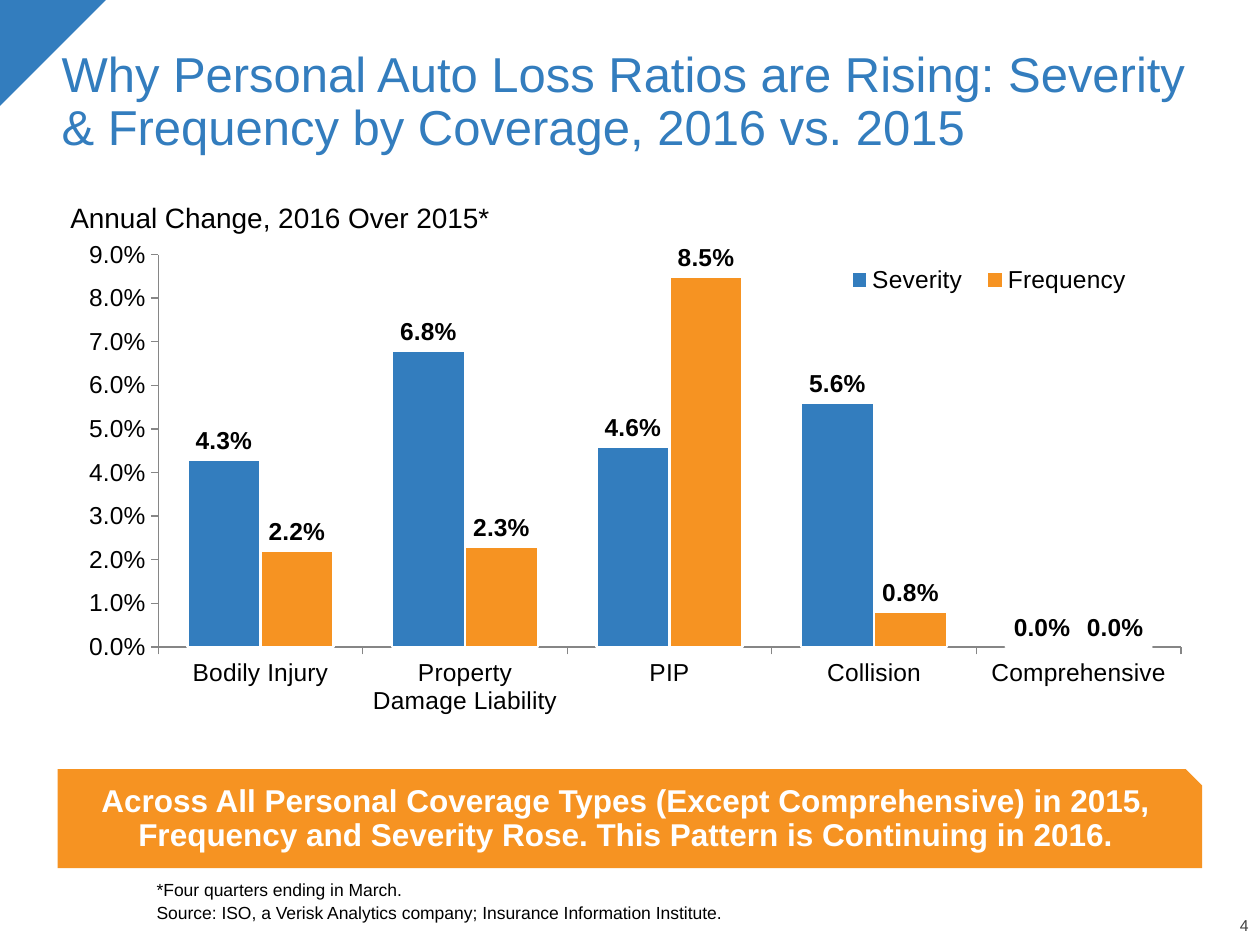
import pptx
import pptx.chart.data
import pptx.dml.color
import pptx.enum.chart
import pptx.enum.shapes
import pptx.enum.text
import pptx.oxml
import pptx.oxml.ns
import pptx.util
from dataclasses import dataclass

Pt = pptx.util.Pt
ALIGN = pptx.enum.text.PP_ALIGN
ANCHOR = pptx.enum.text.MSO_ANCHOR
CHART = pptx.enum.chart

# Content
TITLE = ("Why Personal Auto Loss Ratios are Rising: "
         "Severity & Frequency by Coverage, 2016 vs. 2015")
SUBTITLE = "Annual Change, 2016 Over 2015*"
COVERAGES = ["Bodily Injury", "Property Damage Liability", "PIP",
             "Collision", "Comprehensive"]
CHANGES = {"Severity": [0.043, 0.068, 0.046, 0.056, 0],
           "Frequency": [0.022, 0.023, 0.085, 0.008, 0]}
MESSAGE = ("Across All Personal Coverage Types (Except Comprehensive) in 2015, "
           "Frequency and Severity Rose. This Pattern is Continuing in 2016.")
NOTES = ["*Four quarters ending in March.",
         "Source: ISO, a Verisk Analytics company; Insurance Information Institute."]
PAGE_NUMBER = "4"

# Places: left, top, width, height in points
CORNER = (0, 0, 60.5, 60.5)
TITLE_AREA = (28, 18, 666, 75)
SUBTITLE_AREA = (33, 113, 666, 31)
CHART_AREA = (33, 109.5, 653, 327)
MESSAGE_AREA = (33, 439.5, 654, 56.5)
NOTES_AREA = (89.5, 495.5, 605, 32)
NUMBER_AREA = (679, 525, 34.5, 9.5)

# Shares of the chart area: x, y, width, height
PLOT_SHARE = (0.088, 0.11, 0.895, 0.686)
LEGEND_SHARE = (0.68, 0.12, 0.27, 0.07)


@dataclass
class Theme:
    font: str = "Arial"
    blue: str = "337DBE"
    orange: str = "F69322"
    white: str = "FFFFFF"
    black: str = "000000"
    dark: str = "404040"
    axis: str = "868686"
    title: int = 28
    message: int = 18
    subtitle: int = 16
    chart: int = 14
    notes: int = 10
    number: int = 9


theme = Theme()


def rgb(value):
    return pptx.dml.color.RGBColor.from_string(value)


def place(shape, area):
    shape.left, shape.top, shape.width, shape.height = map(Pt, area)


def style_font(font, size, color, bold=False):
    font.name, font.size, font.bold = theme.font, Pt(size), bold
    font.color.rgb = rgb(color)


def write(shape, lines, size, color, bold=False, align=ALIGN.LEFT,
          anchor=ANCHOR.TOP, insets=(7.2, 3.6, 7.2, 3.6), gap=0):
    frame = shape.text_frame
    frame.word_wrap = True
    frame.auto_size = pptx.enum.text.MSO_AUTO_SIZE.NONE
    frame.vertical_anchor = anchor
    (frame.margin_left, frame.margin_top,
     frame.margin_right, frame.margin_bottom) = map(Pt, insets)
    for index, line in enumerate(lines):
        para = frame.add_paragraph() if index else frame.paragraphs[0]
        para.alignment, para.line_spacing = align, 0.9
        para.space_before = Pt(gap if index else 0)
        span = para.add_run()
        span.text = line
        style_font(span.font, size, color, bold)
        if shape.is_placeholder:
            remove_bullet(para)


def remove_bullet(para):
    properties = para._p.get_or_add_pPr()
    properties.set("marL", "0")
    properties.set("indent", "0")
    properties.append(pptx.oxml.parse_xml(
        f'<a:buNone {pptx.oxml.ns.nsdecls("a")}/>'))


def add_filled(page, kind, area, color):
    shape = page.shapes.add_shape(kind, *map(Pt, area))
    shape.shadow.inherit = False
    shape.fill.solid()
    shape.fill.fore_color.rgb = rgb(color)
    shape.line.fill.background()
    return shape


def set_layout(element, position, share, target=""):
    """Fix the place of a chart part as shares of the chart area."""
    for old in element.findall(pptx.oxml.ns.qn("c:layout")):
        element.remove(old)
    values = "".join(f'<c:{name} val="{value}"/>'
                     for name, value in zip("xywh", share))
    element.insert(position, pptx.oxml.parse_xml(
        f'<c:layout {pptx.oxml.ns.nsdecls("c")}><c:manualLayout>{target}'
        f'<c:xMode val="edge"/><c:yMode val="edge"/>{values}'
        '</c:manualLayout></c:layout>'))


def add_changes_chart(page):
    data = pptx.chart.data.CategoryChartData(number_format="0.0%")
    data.categories = COVERAGES
    for name, values in CHANGES.items():
        data.add_series(name, values)
    chart = page.shapes.add_chart(CHART.XL_CHART_TYPE.COLUMN_CLUSTERED,
                                  *map(Pt, CHART_AREA), data).chart
    chart.has_title = False
    style_font(chart.font, theme.chart, theme.black)

    # Axes
    for axis in (chart.category_axis, chart.value_axis):
        axis.has_major_gridlines = False
        axis.major_tick_mark = CHART.XL_TICK_MARK.OUTSIDE
        axis.format.line.color.rgb = rgb(theme.axis)
    chart.category_axis.tick_label_position = CHART.XL_TICK_LABEL_POSITION.LOW
    scale = chart.value_axis
    scale.minimum_scale, scale.maximum_scale, scale.major_unit = 0, 0.09, 0.01
    scale.tick_labels.number_format = "0.0%"
    scale.tick_labels.number_format_is_linked = False

    # Columns and their labels
    plot = chart.plots[0]
    plot.gap_width, plot.overlap, plot.vary_by_categories = 80, 0, False
    for series, color in zip(plot.series, (theme.blue, theme.orange)):
        series.format.fill.solid()
        series.format.fill.fore_color.rgb = rgb(color)
        series.format.line.color.rgb = rgb(theme.white)
        series.format.line.width = Pt(1.5)
        labels = series.data_labels
        labels.show_value = True
        labels.number_format, labels.number_format_is_linked = "0.0%", False
        labels.position = CHART.XL_LABEL_POSITION.OUTSIDE_END
        style_font(labels.font, theme.chart, theme.black, bold=True)

    # Legend and plot area
    chart.has_legend = True
    chart.legend.position = CHART.XL_LEGEND_POSITION.TOP
    chart.legend.include_in_layout = False
    set_layout(chart.legend._element, 1, LEGEND_SHARE)
    set_layout(chart._chartSpace.chart.plotArea, 0, PLOT_SHARE,
               '<c:layoutTarget val="inner"/>')


def main():
    deck = pptx.Presentation()
    deck.slide_width, deck.slide_height = Pt(720), Pt(540)
    page = deck.slides.add_slide(deck.slide_layouts.get_by_name("Two Content"))
    title, subtitle, notes = page.placeholders

    # Corner and page number
    kinds = pptx.enum.shapes.MSO_SHAPE
    add_filled(page, kinds.RIGHT_TRIANGLE, CORNER, theme.blue).rotation = 90
    number = page.shapes.add_textbox(*map(Pt, NUMBER_AREA))
    write(number, [PAGE_NUMBER], theme.number, theme.dark, align=ALIGN.RIGHT,
          anchor=ANCHOR.BOTTOM, insets=(0, 0, 0, 0))

    # Title and notes
    place(title, TITLE_AREA)
    write(title, [TITLE], theme.title, theme.blue, anchor=ANCHOR.BOTTOM)
    place(notes, NOTES_AREA)
    write(notes, NOTES, theme.notes, theme.black, anchor=ANCHOR.BOTTOM,
          insets=(0, 0, 0, 0), gap=2)

    # Message banner
    banner = add_filled(page, kinds.SNIP_1_RECTANGLE, MESSAGE_AREA, theme.orange)
    write(banner, [MESSAGE], theme.message, theme.white, bold=True,
          align=ALIGN.CENTER, anchor=ANCHOR.MIDDLE, insets=(7.2, 3.6, 7.2, 7.2))

    # Chart, with its subtitle in front
    add_changes_chart(page)
    place(subtitle, SUBTITLE_AREA)
    write(subtitle, [SUBTITLE], theme.subtitle, theme.black)
    subtitle.element.getparent().append(subtitle.element)

    deck.save("out.pptx")


if __name__ == "__main__":
    main()
